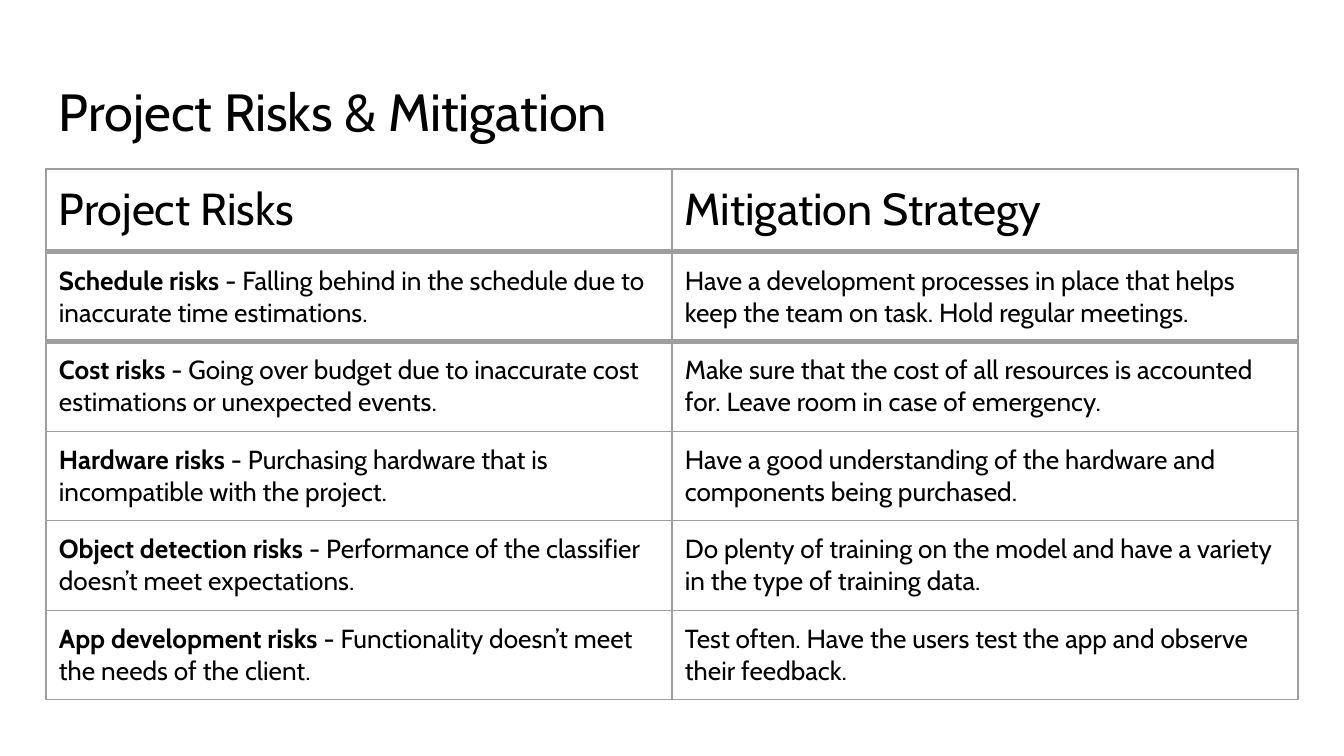
from dataclasses import dataclass

from lxml.etree import SubElement
from pptx import Presentation
from pptx.dml.color import RGBColor
from pptx.enum.text import MSO_ANCHOR, MSO_AUTO_SIZE, PP_ALIGN
from pptx.oxml.ns import qn
from pptx.util import Emu, Pt

SLIDE_W, SLIDE_H = 1344, 756
EMU_PER_PX = 9144000 / SLIDE_W


@dataclass(frozen=True)
class Theme:
    font: str = "Cabin"
    ink: str = "000000"
    rule: str = "9E9E9E"
    title_size: int = 28
    header_size: int = 24
    body_size: int = 14
    thin: float = 0.75
    thick: float = 3
    inset: int = 13


THEME = Theme()

TITLE = "Project Risks & Mitigation"
HEADERS = ("Project Risks", "Mitigation Strategy")
# Risk name, description, mitigation strategy
RISKS = [
    ("Schedule risks", " - Falling behind in the schedule due to inaccurate time estimations.",
     "Have a development processes in place that helps keep the team on task. "
     "Hold regular meetings."),
    ("Cost risks ", "- Going over budget due to inaccurate cost estimations or unexpected events.",
     "Make sure that the cost of all resources is accounted for. "
     "Leave room in case of emergency."),
    ("Hardware risks", " - Purchasing hardware that is incompatible with the project.",
     "Have a good understanding of the hardware and components being purchased."),
    ("Object detection risks", " - Performance of the classifier doesn’t meet expectations.",
     "Do plenty of training on the model and have a variety in the type of training data."),
    ("App development risks", " - Functionality doesn’t meet the needs of the client.",
     "Test often. Have the users test the app and observe their feedback."),
]


def px(length):
    return Emu(round(length * EMU_PER_PX))


def set_margins(target):
    target.margin_left = target.margin_right = px(THEME.inset)
    target.margin_top = target.margin_bottom = px(THEME.inset)


def add_runs(paragraph, runs, size):
    """Add (text, bold) runs, left aligned."""
    paragraph.alignment = PP_ALIGN.LEFT
    for text, bold in runs:
        run = paragraph.add_run()
        run.text = text
        run.font.name = THEME.font
        run.font.size = Pt(size)
        run.font.bold = bold
        run.font.color.rgb = RGBColor.from_string(THEME.ink)


def set_borders(cell, top, bottom):
    properties = cell._tc.get_or_add_tcPr()
    sides = {"L": THEME.thin, "R": THEME.thin, "T": top, "B": bottom}
    for side, width in sides.items():
        line = SubElement(properties, qn(f"a:ln{side}"), w=str(Pt(width)))
        fill = SubElement(line, qn("a:solidFill"))
        SubElement(fill, qn("a:srgbClr"), val=THEME.rule)
        SubElement(line, qn("a:prstDash"), val="solid")


def fill_cell(cell, runs, size, top, bottom):
    set_margins(cell)
    cell.vertical_anchor = MSO_ANCHOR.TOP
    add_runs(cell.text_frame.paragraphs[0], runs, size)
    set_borders(cell, top, bottom)
    cell.fill.background()


def place_title(slide, left, top, width, height):
    title = slide.shapes.title
    title.left, title.top, title.width, title.height = map(px, (left, top, width, height))
    frame = title.text_frame
    frame.word_wrap = True
    frame.auto_size = MSO_AUTO_SIZE.NONE
    frame.vertical_anchor = MSO_ANCHOR.TOP
    set_margins(frame)
    add_runs(frame.paragraphs[0], [(TITLE, False)], THEME.title_size)


def place_risk_table(slide, left, top, width, header_height, row_height):
    rows = [[[(header, False)] for header in HEADERS]]
    rows += [[[(name, True), (description, False)], [(strategy, False)]]
             for name, description, strategy in RISKS]
    height = header_height + row_height * len(RISKS)
    table = slide.shapes.add_table(
        len(rows), len(HEADERS), *map(px, (left, top, width, height))).table
    table.first_row = table.horz_banding = False
    for column in table.columns:
        column.width = px(width / len(HEADERS))

    for index, row in enumerate(rows):
        is_header = index == 0
        table.rows[index].height = px(header_height if is_header else row_height)
        size = THEME.header_size if is_header else THEME.body_size
        # Heavy rules lie under the header and under the first risk
        top_rule = THEME.thick if index == 1 else THEME.thin
        bottom_rule = THEME.thick if index <= 1 else THEME.thin
        for cell, runs in zip(table.rows[index].cells, row):
            fill_cell(cell, runs, size, top_rule, bottom_rule)


def main():
    presentation = Presentation()
    presentation.slide_width, presentation.slide_height = px(SLIDE_W), px(SLIDE_H)
    slide = presentation.slides.add_slide(presentation.slide_layouts.get_by_name("Title Only"))
    place_title(slide, left=46, top=66, width=1252, height=84)
    place_risk_table(slide, left=46, top=169, width=1252, header_height=83, row_height=79)
    presentation.save("out.pptx")


if __name__ == "__main__":
    main()
